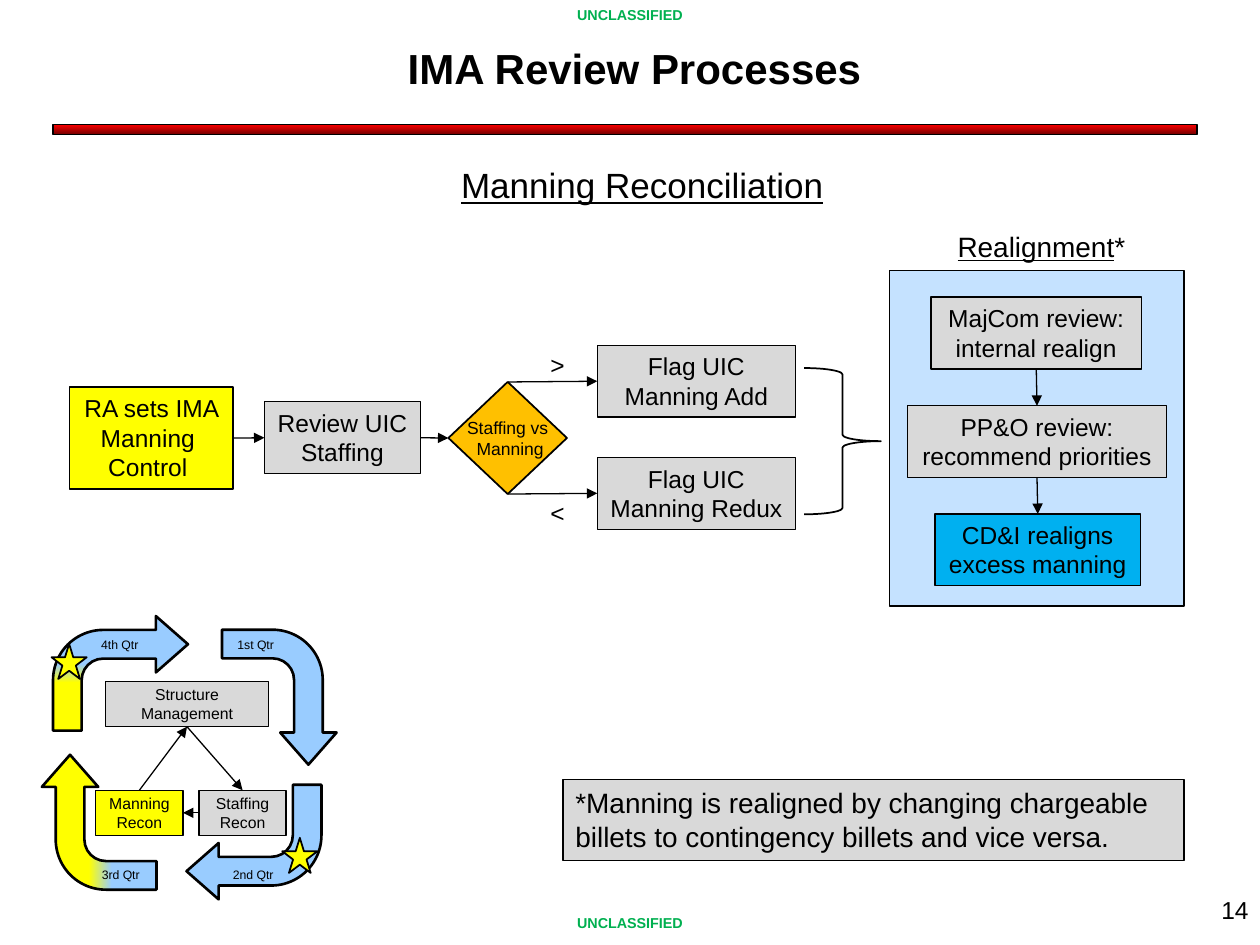
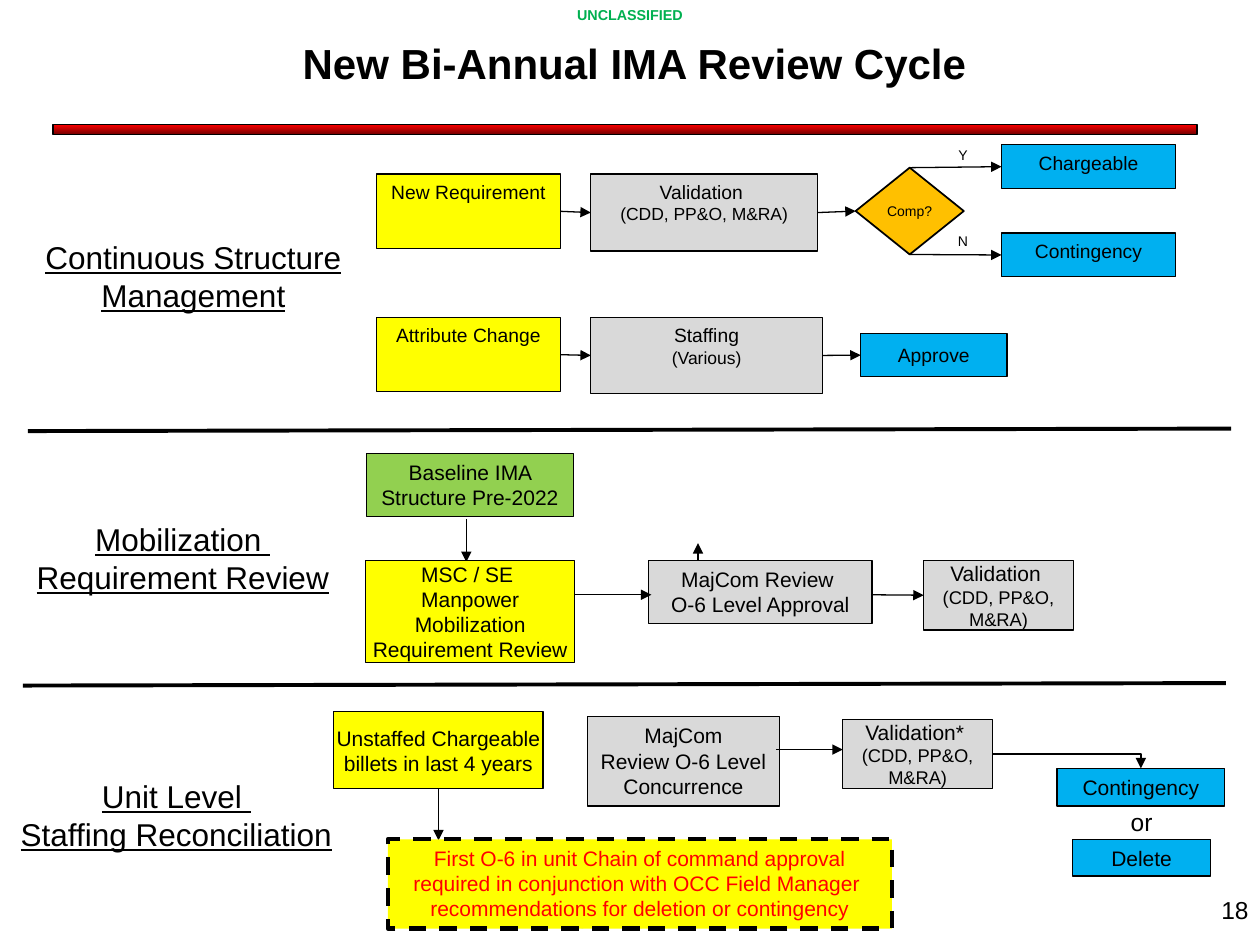
import dataclasses

import pptx
import pptx.dml.color
import pptx.enum.dml
import pptx.enum.shapes
import pptx.enum.text
import pptx.oxml
import pptx.oxml.ns
import pptx.util

Cm = pptx.util.Cm
Pt = pptx.util.Pt
SHAPE = pptx.enum.shapes.MSO_SHAPE
CONNECTOR = pptx.enum.shapes.MSO_CONNECTOR
ANCHOR = pptx.enum.text.MSO_ANCHOR
ALIGN = pptx.enum.text.PP_ALIGN
qn = pptx.oxml.ns.qn

TOP, LEFT, BOTTOM, RIGHT = range(4)


@dataclasses.dataclass(frozen=True)
class Theme:
    font: str = "Arial"
    black: str = "000000"
    marking: str = "00B050"
    yellow: str = "FFFF00"
    grey: str = "D9D9D9"
    amber: str = "FFC000"
    blue: str = "00B0F0"
    pale_blue: str = "99CCFF"
    green: str = "92D050"
    alert: str = "FF0000"
    dark_red: str = "760000"
    title: float = 24
    subtitle: float = 20
    heading: float = 18
    note: float = 16
    body: float = 14
    step: float = 12
    small_step: float = 11
    reviewers: float = 10.5
    detail: float = 10
    cycle: float = 9
    marking_size: float = 8.2
    tiny: float = 8
    quarter: float = 7
    thin: float = 0.75
    outline: float = 1
    thick: float = 2.25


THEME = Theme()


def rgb(code):
    return pptx.dml.color.RGBColor.from_string(code)


def lengths(*values):
    return [Cm(v) for v in values]


def write(sp, paragraphs, size=THEME.body, color=THEME.black, bold=False, underline=False,
          align=ALIGN.CENTER, anchor=ANCHOR.TOP, inset=None, wrap=True):
    """Fill sp; each paragraph is a string or a list of (text, overrides) runs."""
    if isinstance(paragraphs, str):
        paragraphs = [paragraphs]
    tf = sp.text_frame
    tf.word_wrap = wrap
    tf.vertical_anchor = anchor
    if inset is not None:
        tf.margin_left = tf.margin_top = tf.margin_right = tf.margin_bottom = Cm(inset)
    for i, runs in enumerate(paragraphs):
        p = tf.paragraphs[0] if i == 0 else tf.add_paragraph()
        p.alignment = align
        if isinstance(runs, str):
            runs = [(runs, {})]
        for text, overrides in runs:
            r = p.add_run()
            r.text = text
            r.font.name = THEME.font
            r.font.size = Pt(overrides.get("size", size))
            r.font.bold = bold
            r.font.underline = overrides.get("underline", underline)
            r.font.color.rgb = rgb(color)


def add_label(slide, box, text, **style):
    sp = slide.shapes.add_textbox(*lengths(*box))
    write(sp, text, **style)
    return sp


def add_figure(slide, kind, box, fill=None, line=THEME.thin):
    sp = slide.shapes.add_shape(kind, *lengths(*box))
    sp.shadow.inherit = False
    if fill:
        sp.fill.solid()
        sp.fill.fore_color.rgb = rgb(fill)
    else:
        sp.fill.background()
    sp.line.color.rgb = rgb(THEME.black)
    sp.line.width = Pt(line)
    return sp


def add_step(slide, box, fill, text, **style):
    sp = add_figure(slide, SHAPE.RECTANGLE, box, fill)
    write(sp, text, **style)
    return sp


def add_decision(slide, box, text, size):
    sp = add_figure(slide, SHAPE.FLOWCHART_DECISION, box, THEME.amber, THEME.outline)
    write(sp, text, size=size, anchor=ANCHOR.MIDDLE, inset=0, wrap=False)
    return sp


def set_gradient(sp, stops, angle):
    """Two (position, colour) stops; angle runs counter-clockwise."""
    sp.fill.gradient()
    sp.fill.gradient_angle = angle
    for stop, (position, color) in zip(sp.fill.gradient_stops, stops):
        stop.position = position
        stop.color.rgb = rgb(color)


def set_opacity(sp, percent):
    color = sp._element.spPr.find(".//" + qn("a:srgbClr"))
    pptx.oxml.ns.nsdecls("a")
    alpha = pptx.oxml.parse_xml(f'<a:alpha {pptx.oxml.ns.nsdecls("a")} val="{percent * 1000}"/>')
    color.append(alpha)


def add_line(slide, begin, end, width=THEME.thin, arrow=True, bent=False):
    """Draw a connector; an end is an (x, y) point or a (shape, side) pair."""
    def is_point(where):
        return isinstance(where[0], (int, float))

    points = [lengths(*w) if is_point(w) else lengths(0, 0) for w in (begin, end)]
    kind = CONNECTOR.ELBOW if bent else CONNECTOR.STRAIGHT
    c = slide.shapes.add_connector(kind, *points[0], *points[1])
    if not is_point(begin):
        c.begin_connect(*begin)
    if not is_point(end):
        c.end_connect(*end)
    c.line.color.rgb = rgb(THEME.black)
    c.line.width = Pt(width)
    spPr = c._element.spPr
    ns = pptx.oxml.ns.nsdecls("a")
    if bent:
        spPr.find(qn("a:prstGeom")).set("prst", "bentConnector2")
    if arrow:
        spPr.find(qn("a:ln")).append(pptx.oxml.parse_xml(f'<a:tailEnd {ns} type="triangle"/>'))
    spPr.append(pptx.oxml.parse_xml(f"<a:effectLst {ns}/>"))
    return c


def add_base_slide(prs, title, number, title_top, **title_style):
    slide = prs.slides.add_slide(prs.slide_layouts[5])
    bar = add_figure(slide, SHAPE.RECTANGLE, (1.07, 2.51, 23.06, 0.2), THEME.alert)
    set_gradient(bar, [(0, THEME.alert), (1, THEME.dark_red)], 270)
    for top in (18.31, 0):
        add_label(slide, (5.08, top, 15.24, 0.61), "UNCLASSIFIED",
                  size=THEME.marking_size, color=THEME.marking, bold=True)
    sp = slide.shapes.title
    sp.left, sp.top, sp.width, sp.height = lengths(2.31, title_top, 20.96, 2.51)
    sp.text_frame.auto_size = pptx.enum.text.MSO_AUTO_SIZE.NONE
    write(sp, title, size=THEME.title, bold=True, **title_style)
    add_label(slide, (21.41, 17.91, 4.01, 1.14), number, align=ALIGN.RIGHT)
    return slide


def add_quarter_cycle(slide):
    arrows = [(1.07, 12.42), (4.27, 12.9), (3.76, 15.82), (0.64, 15.42)]
    gradients = {0: [(0.42, THEME.yellow), (0.58, THEME.pale_blue)],
                 3: [(0.39, THEME.pale_blue), (0.59, THEME.yellow)]}
    for i, (x, y) in enumerate(arrows):
        sp = add_figure(slide, SHAPE.BENT_ARROW, (x, y, 2.72, 2.31), THEME.pale_blue, 1.5)
        for j, value in enumerate((0.25, 0.246, 0.28, 0.438)):
            sp.adjustments[j] = value
        sp.rotation = 90 * i
        if i in gradients:
            set_gradient(sp, gradients[i], 90)
    for text, x, y in [("4th Qtr", 1.73, 12.73), ("1st Qtr", 4.47, 12.73),
                       ("2nd Qtr", 4.42, 17.35), ("3rd Qtr", 1.75, 17.35)]:
        add_label(slide, (x, y, 1.37, 0.51), text, size=THEME.quarter, wrap=False)
    for x, y in [(1.04, 12.98), (5.69, 16.89)]:
        add_figure(slide, SHAPE.STAR_5_POINT, (x, y, 0.71, 0.71), THEME.yellow, THEME.outline)

    style = dict(size=THEME.cycle, anchor=ANCHOR.MIDDLE)
    structure = add_step(slide, (2.13, 13.74, 3.28, 0.91), THEME.grey,
                         "Structure Management", **style)
    manning = add_step(slide, (1.93, 15.93, 1.76, 0.91), THEME.yellow, "Manning Recon", **style)
    staffing = add_step(slide, (4.01, 15.93, 1.76, 0.91), THEME.grey, "Staffing Recon", **style)
    add_line(slide, (structure, BOTTOM), (staffing, TOP))
    add_line(slide, (staffing, LEFT), (manning, RIGHT))
    add_line(slide, (manning, TOP), (structure, BOTTOM))


def add_manning_flow(slide):
    control = add_step(slide, (1.4, 7.8, 3.3, 2.06), THEME.yellow,
                       ["RA sets IMA Manning ", "Control "])
    review = add_step(slide, (5.33, 8.1, 3.15, 1.45), THEME.grey, "Review UIC Staffing")
    decision = add_decision(slide, (9.04, 7.7, 2.39, 2.26), ["Staffing vs", " Manning"],
                            THEME.detail)
    add_line(slide, (control, RIGHT), (review, LEFT))
    add_line(slide, (review, RIGHT), (decision, LEFT))
    for side, y, text, sign, sign_y in [(TOP, 6.96, "Flag UIC Manning Add", ">", 6.93),
                                        (BOTTOM, 9.22, "Flag UIC Manning Redux", "<", 9.91)]:
        flag = add_step(slide, (12.04, y, 4, 1.45), THEME.grey, text)
        add_line(slide, (decision, side), (flag, LEFT))
        add_label(slide, (10.77, sign_y, 0.94, 0.86), sign)


def add_realignment(slide):
    panel = add_figure(slide, SHAPE.RECTANGLE, (17.93, 5.46, 5.94, 6.76), THEME.pale_blue)
    set_opacity(panel, 57)
    previous = None
    for x, y, width, fill, text in [
            (18.77, 5.99, 4.24, THEME.grey, "MajCom review: internal realign"),
            (18.29, 8.18, 5.23, THEME.grey, "PP&O review: recommend priorities "),
            (18.85, 10.36, 4.14, THEME.blue, "CD&I realigns excess manning")]:
        step = add_step(slide, (x, y, width, 1.45), fill, text)
        if previous is not None:
            add_line(slide, (previous, BOTTOM), (step, TOP))
        previous = step
    add_figure(slide, SHAPE.RIGHT_BRACE, (16.21, 7.42, 1.55, 2.95), line=THEME.outline)
    add_label(slide, (19, 4.5, 3.99, 0.94),
              [[("Realignment", {"underline": True}), ("*", {})]], size=THEME.note)


def add_section_heading(slide, box, text):
    add_label(slide, box, text, size=THEME.heading, underline=True)


def add_structure_section(slide):
    add_section_heading(slide, (0.18, 4.67, 7.44, 1.8), "Continuous Structure Management")
    style = dict(size=THEME.small_step)
    detail = {"size": THEME.detail}
    new = add_step(slide, (7.59, 3.51, 3.71, 1.5), THEME.yellow, "New Requirement", **style)
    validation = add_step(slide, (11.91, 3.51, 4.57, 1.55), THEME.grey,
                          ["Validation ", [("(CDD, PP&O, M&RA)", detail)]], **style)
    decision = add_decision(slide, (17.25, 3.38, 2.18, 1.75), "Comp?", THEME.tiny)
    for side, y, text, answer, answer_y in [(TOP, 2.92, "Chargeable", "Y", 2.82),
                                            (BOTTOM, 4.7, "Contingency", "N", 4.57)]:
        outcome = add_step(slide, (20.19, y, 3.51, 0.88), THEME.blue, text, **style)
        add_line(slide, (decision, side), (outcome, LEFT))
        add_label(slide, (18.92, answer_y, 0.99, 0.76), answer, size=THEME.tiny)
    change = add_step(slide, (7.59, 6.4, 3.71, 1.5), THEME.yellow, "Attribute Change", **style)
    staffing = add_step(slide, (11.91, 6.4, 4.67, 1.53), THEME.grey,
                        ["Staffing", [("(Various)", detail)]], **style)
    approve = add_step(slide, (17.35, 6.73, 2.95, 0.86), THEME.blue, "Approve",
                       anchor=ANCHOR.MIDDLE, **style)
    for a, b in [(new, validation), (validation, decision),
                 (change, staffing), (staffing, approve)]:
        add_line(slide, (a, RIGHT), (b, LEFT))


def add_validation(slide, x, y, heading):
    return add_step(slide, (x, y, 3.02, 1.4), THEME.grey,
                    [heading, [("(CDD, PP&O, M&RA)", {"size": THEME.reviewers})]],
                    size=THEME.step, inset=0)


def add_mobilization_section(slide):
    add_section_heading(slide, (0, 10.36, 7.37, 1.8), ["Mobilization ", "Requirement Review"])
    style = dict(size=THEME.step)
    add_line(slide, (14.07, 11.63), (14.07, 10.95))
    add_step(slide, (7.39, 9.14, 4.17, 1.27), THEME.green,
             "Baseline IMA Structure Pre-2022", **style)
    add_line(slide, (9.4, 10.46), (9.4, 11.33))
    add_step(slide, (13.08, 11.3, 4.5, 1.27), THEME.grey,
             ["MajCom Review ", "O-6 Level Approval"], **style)
    validation = add_validation(slide, 18.62, 11.3, "Validation ")
    add_line(slide, (17.58, 11.99), (validation, LEFT))
    add_line(slide, (11.58, 11.99), (13.13, 11.99))
    add_step(slide, (7.37, 11.3, 4.22, 2.06), THEME.yellow,
             ["MSC / SE ", "Manpower Mobilization Requirement Review"],
             anchor=ANCHOR.MIDDLE, inset=0, **style)


def add_unit_section(slide):
    add_section_heading(slide, (0, 15.54, 7.11, 1.8), ["Unit Level ", "Staffing Reconciliation"])
    style = dict(size=THEME.step)
    unstaffed = add_step(slide, (6.73, 14.35, 4.22, 1.55), THEME.yellow,
                         "Unstaffed Chargeable billets in last 4 years",
                         anchor=ANCHOR.MIDDLE, inset=0, **style)
    add_step(slide, (11.84, 14.45, 3.88, 1.8), THEME.grey,
             ["MajCom", "Review O-6 Level Concurrence"], **style)
    add_label(slide, (22.48, 16.15, 1.07, 0.86), "or", wrap=False)
    validation = add_validation(slide, 16.99, 14.5, "Validation* ")
    contingency = add_step(slide, (21.31, 15.49, 3.38, 0.76), THEME.blue, "Contingency", **style)
    add_step(slide, (21.62, 16.92, 2.79, 0.74), THEME.blue, "Delete",
             anchor=ANCHOR.MIDDLE, **style)
    add_line(slide, (unstaffed, BOTTOM), (8.84, 16.94))
    add_line(slide, (15.65, 15.11), (16.99, 15.11))
    add_line(slide, (validation, RIGHT), (contingency, TOP), bent=True)
    approval = add_step(slide, (7.82, 16.92, 10.16, 1.8), THEME.yellow,
                        ["First O-6 in unit Chain of command approval required in "
                         "conjunction with OCC Field Manager ",
                         "recommendations for deletion or contingency"],
                        color=THEME.alert, **style)
    approval.line.width = Pt(2.5)
    approval.line.dash_style = pptx.enum.dml.MSO_LINE.DASH


def build_review_processes(prs):
    slide = add_base_slide(prs, "IMA Review Processes", "14", 0.46, inset=0.4)
    add_label(slide, (8.86, 3.18, 8.18, 1.12), "Manning Reconciliation",
              size=THEME.subtitle, underline=True)
    add_quarter_cycle(slide)
    add_step(slide, (11.35, 15.72, 12.52, 1.63), THEME.grey,
             "*Manning is realigned by changing chargeable billets to contingency "
             "billets and vice versa.", size=THEME.note, align=ALIGN.LEFT)
    add_manning_flow(slide)
    add_realignment(slide)


def build_review_cycle(prs):
    slide = add_base_slide(prs, "New Bi-Annual IMA Review Cycle", "18", 0, anchor=ANCHOR.MIDDLE)
    add_structure_section(slide)
    add_unit_section(slide)
    add_line(slide, (0.56, 8.69), (24.82, 8.64), THEME.thick, arrow=False)
    add_line(slide, (0.46, 13.82), (24.71, 13.77), THEME.thick, arrow=False)
    add_mobilization_section(slide)


def main():
    prs = pptx.Presentation()
    prs.slide_width, prs.slide_height = lengths(25.4, 19.05)
    build_review_processes(prs)
    build_review_cycle(prs)
    prs.save("out.pptx")


if __name__ == "__main__":
    main()
